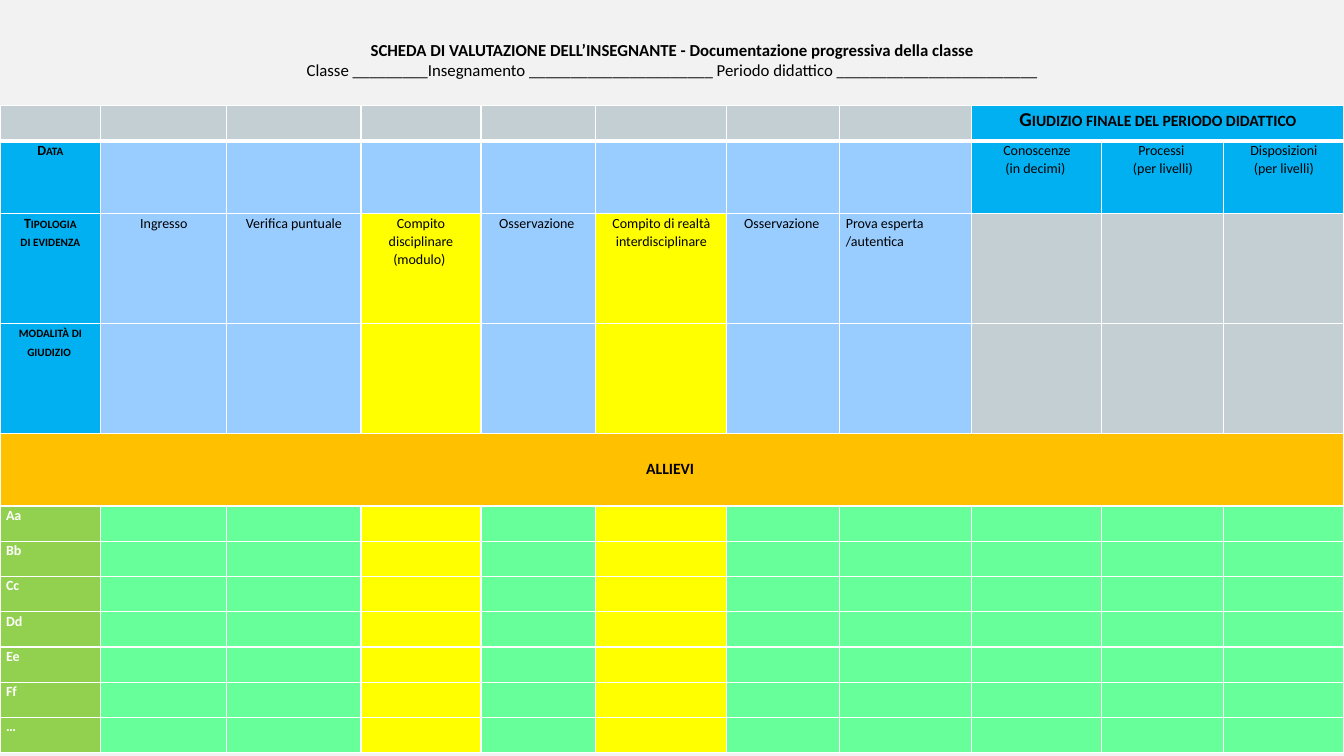
from lxml import etree
from pptx import Presentation
from pptx import util as u
from pptx.dml.color import RGBColor
from pptx.enum import text
from pptx.oxml import ns

BLACK = RGBColor(0x00, 0x00, 0x00)
WHITE = RGBColor(0xFF, 0xFF, 0xFF)
PAPER = RGBColor(0xF2, 0xF2, 0xF2)
GREY = RGBColor(0xC3, 0xCF, 0xD3)
BLUE = RGBColor(0x00, 0xB0, 0xF0)
SKY = RGBColor(0x99, 0xCC, 0xFF)
YELLOW = RGBColor(0xFF, 0xFF, 0x00)
ORANGE = RGBColor(0xFF, 0xC0, 0x00)
OLIVE = RGBColor(0x92, 0xD0, 0x50)
MINT = RGBColor(0x66, 0xFF, 0x99)

CENTER, LEFT = text.PP_ALIGN.CENTER, text.PP_ALIGN.LEFT
PUPILS = ["Aa", "Bb", "Cc", "Dd", "Ee", "Ff", "…"]
EVIDENCE = ["Ingresso", "Verifica puntuale", "Compito disciplinare (modulo) ",
            "Osservazione ", "Compito di realtà interdisciplinare",
            "Osservazione ", "Prova esperta /autentica"]
JUDGEMENTS = [["Conoscenze", "(in decimi) "], ["Processi ", "(per livelli)"],
              ["Disposizioni", "(per livelli)"]]
WIDTHS = [1, 1.25, 1.33, 1.19, 1.14, 1.3, 1.12, 1.31, 1.29, 1.21, 1.19]
HEIGHTS = [0.35, 0.72, 1.09, 1.09, 0.72] + [0.35] * len(PUPILS)
TASK_COLUMNS = (3, 5)
FINAL_COLUMN = 8
PUPILS_BANNER = 4


def add_run(paragraph, words, size, color=BLACK, bold=False, small_caps=False):
    run = paragraph.add_run()
    run.text = words
    run.font.name = "Calibri"
    run.font.size = u.Pt(size)
    run.font.bold = bold
    run.font.color.rgb = color
    if small_caps:
        run.font._element.set("cap", "small")


def write(cell, lines, size=10, align=CENTER, **style):
    cell.margin_left = cell.margin_right = u.Inches(0.06)
    frame = cell.text_frame
    for i, line in enumerate(lines):
        paragraph = frame.add_paragraph() if i else frame.paragraphs[0]
        paragraph.alignment = align
        paragraph.line_spacing = 1.07
        add_run(paragraph, line, size, **style)


def add_borders(cell, top, bottom):
    properties = cell._tc.get_or_add_tcPr()
    for side, width in (("L", 1), ("R", 1), ("T", top), ("B", bottom)):
        line = etree.SubElement(properties, ns.qn(f"a:ln{side}"), w=str(u.Pt(width)))
        fill = etree.SubElement(line, ns.qn("a:solidFill"))
        etree.SubElement(fill, ns.qn("a:srgbClr"), val=str(WHITE))


def cell_color(row, column):
    if row == PUPILS_BANNER:
        return ORANGE
    if row > PUPILS_BANNER and column == 0:
        return OLIVE
    if row == 0:
        return BLUE if column >= FINAL_COLUMN else GREY
    if column == 0 or (row == 1 and column >= FINAL_COLUMN):
        return BLUE
    if row > 1 and column in TASK_COLUMNS:
        return YELLOW
    if row > PUPILS_BANNER:
        return MINT
    return GREY if column >= FINAL_COLUMN else SKY


def add_grid(slide):
    grid = slide.shapes.add_table(
        len(HEIGHTS), len(WIDTHS), u.Inches(0), u.Inches(1.05),
        u.Inches(sum(WIDTHS)), u.Inches(sum(HEIGHTS))).table
    grid.first_row = grid.horz_banding = False
    for column, width in zip(grid.columns, WIDTHS):
        column.width = u.Inches(width)
    for r, height in enumerate(HEIGHTS):
        grid.rows[r].height = u.Inches(height)
        for c in range(len(WIDTHS)):
            cell = grid.cell(r, c)
            cell.margin_top = cell.margin_bottom = 0
            add_borders(cell, 3 if r == 1 else 1, 3 if r == 0 else 1)
            cell.fill.solid()
            cell.fill.fore_color.rgb = cell_color(r, c)
    last = len(WIDTHS) - 1
    grid.cell(0, FINAL_COLUMN).merge(grid.cell(0, last))
    grid.cell(PUPILS_BANNER, 0).merge(grid.cell(PUPILS_BANNER, last))
    return grid


def fill_grid(grid):
    heading = {"bold": True, "small_caps": True}
    write(grid.cell(0, FINAL_COLUMN), ["Giudizio finale del periodo didattico"],
          14, **heading)
    labels = [["Data"], ["Tipologia", "di evidenza"], ["modalità di giudizio "]]
    for r, lines in enumerate(labels, 1):
        write(grid.cell(r, 0), lines, **heading)
    for c, lines in enumerate(JUDGEMENTS, FINAL_COLUMN):
        write(grid.cell(1, c), lines)
    for c, kind in enumerate(EVIDENCE, 1):
        write(grid.cell(2, c), [kind],
              align=LEFT if c == len(EVIDENCE) else CENTER)
    banner = grid.cell(PUPILS_BANNER, 0)
    write(banner, ["allievi "], 14, **heading)
    banner.vertical_anchor = text.MSO_ANCHOR.MIDDLE
    banner.margin_bottom = u.Inches(0.06)
    for r, pupil in enumerate(PUPILS, PUPILS_BANNER + 1):
        write(grid.cell(r, 0), [pupil], align=LEFT, color=WHITE, bold=True)


def add_title(slide):
    frame = slide.shapes.add_textbox(
        u.Inches(0.46), u.Inches(0.34), u.Inches(12.42), u.Inches(0.71)).text_frame
    frame.word_wrap = True
    title = frame.paragraphs[0]
    blanks = frame.add_paragraph()
    title.alignment = blanks.alignment = CENTER
    add_run(title, "SCHEDA DI VALUTAZIONE DELL’INSEGNANTE - "
                   "Documentazione progressiva della classe", 12, bold=True)
    add_run(blanks, "Classe _________Insegnamento ______________________ "
                    "Periodo didattico ________________________", 12)


def main():
    deck = Presentation()
    deck.slide_width, deck.slide_height = u.Inches(13.33), u.Inches(7.5)
    slide = deck.slides.add_slide(deck.slide_layouts[6])
    slide.background.fill.solid()
    slide.background.fill.fore_color.rgb = PAPER
    fill_grid(add_grid(slide))
    add_title(slide)
    deck.save("out.pptx")


if __name__ == "__main__":
    main()
